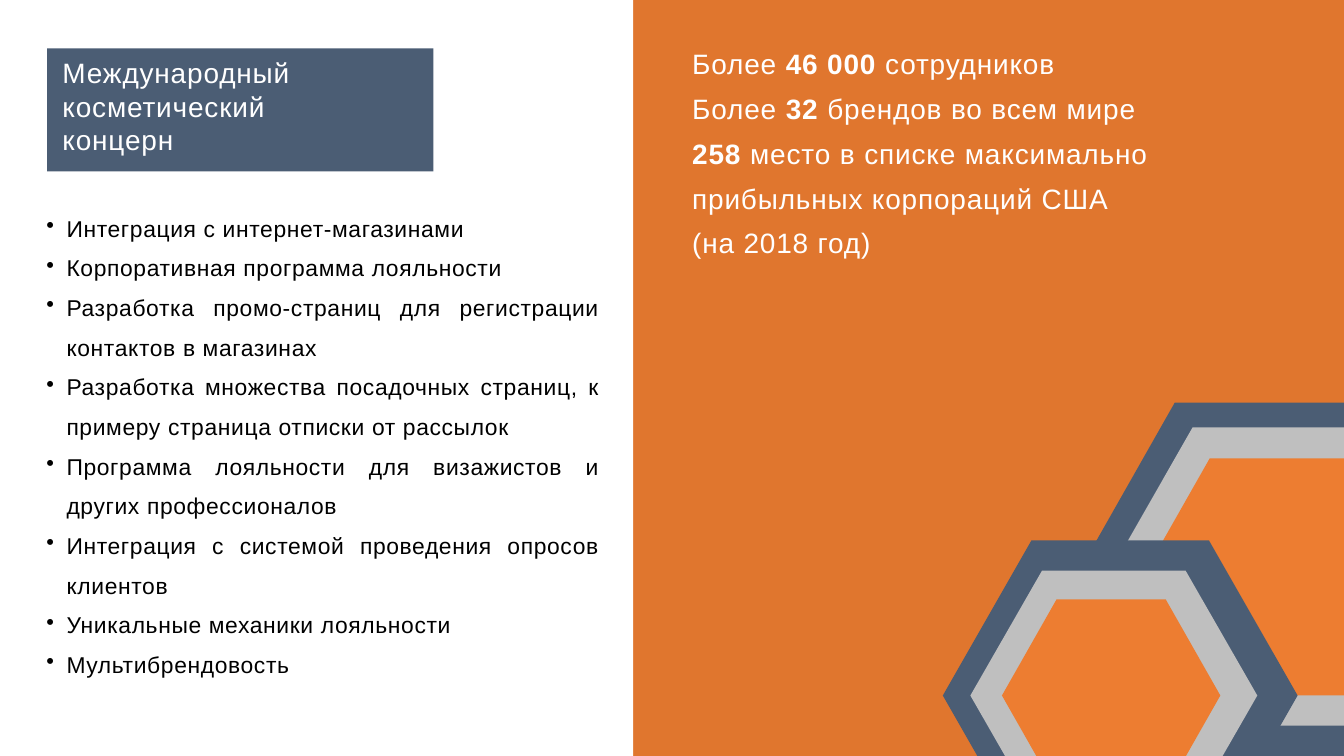
from dataclasses import dataclass

import pptx
import pptx.dml.color
import pptx.enum.shapes
import pptx.enum.text
import pptx.oxml.ns
import pptx.util
from lxml import etree
from pptx.util import Inches

WHITE, BLACK, SLATE, SILVER, ORANGE = "FFFFFF", "000000", "4B5D74", "BFBFBF", "ED7D31"
SHAPES = pptx.enum.shapes.MSO_SHAPE
ALIGN = pptx.enum.text.PP_ALIGN


@dataclass
class Area:
    left: float
    top: float
    width: float
    height: float

    def lengths(self) -> list:
        return [Inches(n) for n in (self.left, self.top, self.width, self.height)]


@dataclass
class TextStyle:
    size: float
    leading: float
    spacing: int  # hundredths of a point
    color: str
    align: ALIGN = ALIGN.LEFT
    bullet: bool = False


@dataclass
class Hexagon:
    area: Area
    color: str


def paint(fill, color: str) -> None:
    fill.solid()
    fill.fore_color.rgb = pptx.dml.color.RGBColor.from_string(color)


def add_filled(page, kind, area: Area, color: str):
    shape = page.shapes.add_shape(kind, *area.lengths())
    shape.shadow.inherit = False
    shape.line.fill.background()
    paint(shape.fill, color)
    return shape


def add_hexagon(page, hexagon: Hexagon) -> None:
    shape = add_filled(page, SHAPES.HEXAGON, hexagon.area, hexagon.color)
    # The slanted sides each take a quarter of the width
    shape.adjustments[0] = 0.25 * hexagon.area.width / hexagon.area.height


def add_bullet(para) -> None:
    properties = para._p.get_or_add_pPr()
    properties.set("marL", str(Inches(0.59)))
    properties.set("indent", str(Inches(-0.3)))
    etree.SubElement(properties, pptx.oxml.ns.qn("a:buChar")).set("char", "•")


def add_text(page, area: Area, lines: list[str], style: TextStyle) -> None:
    """Write one paragraph per line; parts between asterisks are bold."""
    box = page.shapes.add_textbox(*area.lengths())
    frame = box.text_frame
    frame.word_wrap = True
    frame.auto_size = pptx.enum.text.MSO_AUTO_SIZE.SHAPE_TO_FIT_TEXT
    frame.margin_left = frame.margin_right = frame.margin_top = frame.margin_bottom = 0
    for index, line in enumerate(lines):
        para = frame.add_paragraph() if index else frame.paragraphs[0]
        if style.bullet:
            add_bullet(para)
        para.alignment = style.align
        para.line_spacing = pptx.util.Pt(style.leading)
        for part, text in enumerate(line.split("*")):
            if not text:
                continue
            span = para.add_run()
            span.text = text
            span.font.name = "Arial"
            span.font.size = pptx.util.Pt(style.size)
            span.font.bold = part % 2 == 1
            paint(span.font.fill, style.color)
            span._r.get_or_add_rPr().set("spc", str(style.spacing))


TITLE = TextStyle(30, 36, 90, WHITE)
FACTS = TextStyle(30, 48, 90, WHITE, ALIGN.JUSTIFY)
SERVICES = TextStyle(24.5, 42.5, 70, BLACK, ALIGN.JUSTIFY, bullet=True)

FACT_LINES = [
    "Более *46 000 *сотрудников",
    "Более *32 *брендов во всем мире",
    "*258 *место в списке максимально прибыльных корпораций США",
    "(на 2018 год)",
]
SERVICE_LINES = [
    "Интеграция с интернет-магазинами",
    "Корпоративная программа лояльности",
    "Разработка промо-страниц для регистрации контактов в магазинах",
    "Разработка множества посадочных страниц, к примеру страница отписки от рассылок",
    "Программа лояльности для визажистов и других профессионалов",
    "Интеграция с системой проведения опросов клиентов",
    "Уникальные механики лояльности",
    "Мультибрендовость",
]
HEXAGONS = [
    Hexagon(Area(15.97, 5.99, 6.05, 5.33), SLATE),
    Hexagon(Area(16.48, 6.36, 5.07, 4.44), SILVER),
    Hexagon(Area(17, 6.82, 4.01, 3.53), ORANGE),
    Hexagon(Area(14.03, 8.04, 5.28, 4.62), SLATE),
    Hexagon(Area(14.44, 8.49, 4.27, 3.72), SILVER),
    Hexagon(Area(14.91, 8.92, 3.25, 2.86), ORANGE),
]


def main() -> None:
    deck = pptx.Presentation()
    deck.slide_width, deck.slide_height = Inches(20), Inches(11.25)
    page = deck.slides.add_slide(deck.slide_layouts[6])

    # Orange background under a faint dark veil
    paint(page.background.fill, ORANGE)
    veil = add_filled(page, SHAPES.RECTANGLE, Area(-0.11, -0.1, 20.22, 11.35), BLACK)
    veil_color = veil._element.spPr.find(".//" + pptx.oxml.ns.qn("a:srgbClr"))
    etree.SubElement(veil_color, pptx.oxml.ns.qn("a:alpha")).set("val", "5000")

    # Company facts on the right
    add_text(page, Area(10.3, 0.53, 6.79, 3.31), FACT_LINES, FACTS)

    # White panel with title and services
    add_filled(page, SHAPES.RECTANGLE, Area(0, 0, 9.42, 11.25), WHITE)
    add_filled(page, SHAPES.RECTANGLE, Area(0.7, 0.72, 5.75, 1.83), SLATE)
    add_text(page, Area(0.93, 0.83, 4.07, 1.52), ["Международный косметический концерн"], TITLE)
    add_text(page, Area(0.4, 3.01, 8.53, 7), SERVICE_LINES, SERVICES)

    # Nested hexagons in the corner
    for hexagon in HEXAGONS:
        add_hexagon(page, hexagon)

    deck.save("out.pptx")


if __name__ == "__main__":
    main()
